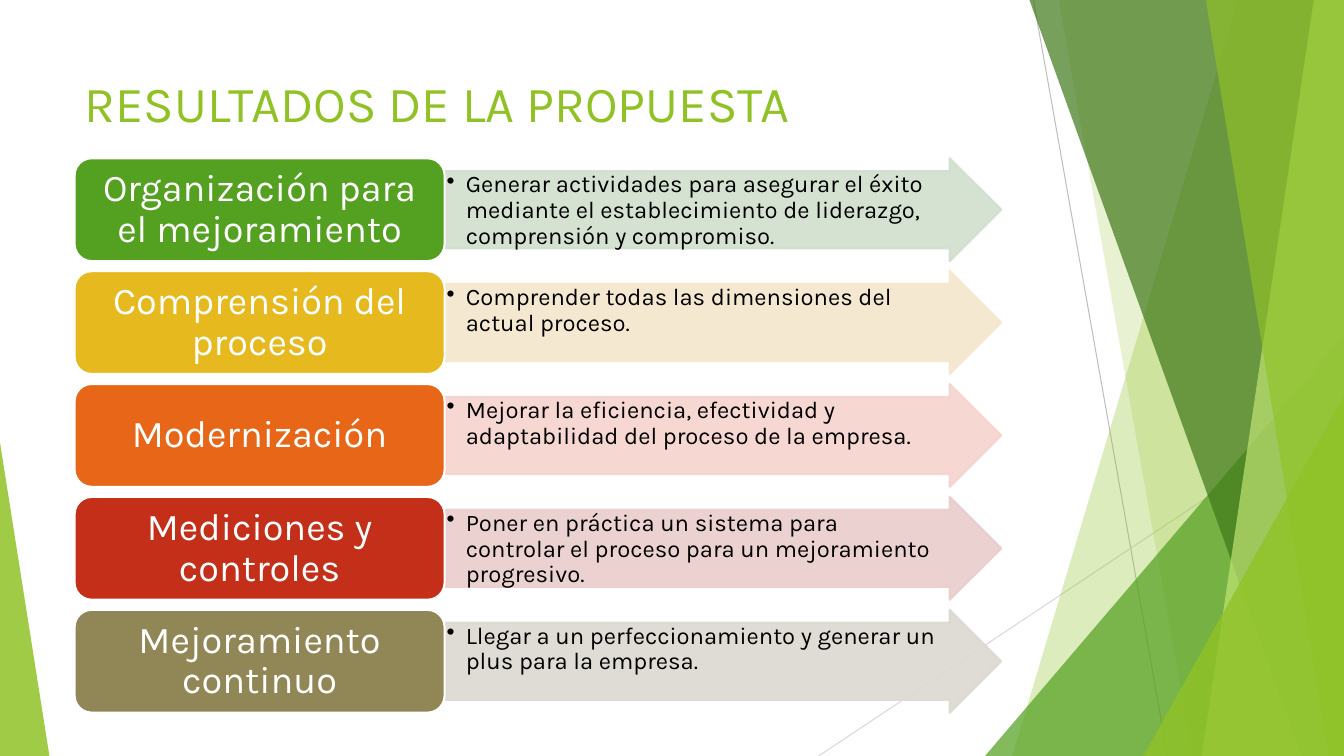
from lxml import etree
from pptx import Presentation
from pptx.dml.color import RGBColor
from pptx.enum.shapes import MSO_CONNECTOR, MSO_SHAPE
from pptx.enum.text import MSO_ANCHOR, MSO_AUTO_SIZE, PP_ALIGN
from pptx.oxml.ns import qn
from pptx.util import Inches, Pt

STRAIGHT = MSO_CONNECTOR.STRAIGHT
TRIANGLE, ARROW, ROUNDED = MSO_SHAPE.ISOSCELES_TRIANGLE, MSO_SHAPE.RIGHT_ARROW, MSO_SHAPE.ROUNDED_RECTANGLE
TOP, MIDDLE = MSO_ANCHOR.TOP, MSO_ANCHOR.MIDDLE
LEFT, CENTER = PP_ALIGN.LEFT, PP_ALIGN.CENTER

WHITE = RGBColor(0xFF, 0xFF, 0xFF)
BLACK = RGBColor(0x00, 0x00, 0x00)
GRAY = RGBColor(0xBF, 0xBF, 0xBF)
LIGHT_GRAY = RGBColor(0xD9, 0xD9, 0xD9)
LIME = RGBColor(0x90, 0xC2, 0x26)
PALE_LIME = RGBColor(0xC0, 0xE4, 0x74)
GREEN = RGBColor(0x54, 0xA0, 0x21)
DARK_GREEN = RGBColor(0x3F, 0x78, 0x19)
YELLOW = RGBColor(0xE6, 0xB9, 0x1E)
ORANGE = RGBColor(0xE7, 0x66, 0x18)
RED = RGBColor(0xC4, 0x2F, 0x1A)
OLIVE = RGBColor(0x91, 0x86, 0x55)
PALE_GREEN = RGBColor(0xD1, 0xDF, 0xCD)
PALE_YELLOW = RGBColor(0xF5, 0xE6, 0xCD)
PALE_ORANGE = RGBColor(0xF6, 0xD3, 0xCC)
PALE_RED = RGBColor(0xEA, 0xCD, 0xCD)
PALE_OLIVE = RGBColor(0xDC, 0xD9, 0xD1)

WIDTH, HEIGHT = 13.33, 7.5

RESULTS = [
    ("Organización para el mejoramiento", GREEN, PALE_GREEN,
     "Generar actividades para asegurar el éxito mediante el establecimiento "
     "de liderazgo, comprensión y compromiso."),
    ("Comprensión del proceso", YELLOW, PALE_YELLOW,
     "Comprender todas las dimensiones del actual proceso."),
    ("Modernización", ORANGE, PALE_ORANGE,
     "Mejorar la eficiencia, efectividad y adaptabilidad del proceso de la empresa."),
    ("Mediciones y controles", RED, PALE_RED,
     "Poner en práctica un sistema para controlar el proceso para un mejoramiento progresivo."),
    ("Mejoramiento continuo", OLIVE, PALE_OLIVE,
     "Llegar a un perfeccionamiento y generar un plus para la empresa."),
]


def write(shape, text, size, color, align=LEFT, anchor=TOP,
          insets=(0.1, 0.05, 0.1, 0.05), spacing=1.0, bullet_indent=None):
    frame = shape.text_frame
    frame.word_wrap = True
    frame.auto_size = MSO_AUTO_SIZE.NONE
    frame.vertical_anchor = anchor
    (frame.margin_left, frame.margin_top,
     frame.margin_right, frame.margin_bottom) = map(Inches, insets)
    paragraph = frame.paragraphs[0]
    paragraph.alignment = align
    paragraph.line_spacing = spacing
    run = paragraph.add_run()
    run.text = text
    run.font.name = "Karla"
    run.font.size = Pt(size)
    run.font.color.rgb = color
    if bullet_indent:
        properties = paragraph._p.get_or_add_pPr()
        properties.set("marL", str(Inches(bullet_indent)))
        properties.set("indent", str(-Inches(bullet_indent)))
        etree.SubElement(properties, qn("a:buChar")).set("char", "•")


class SlideBuilder:
    font_size_title, font_size_label, font_size_detail = 36, 27, 17

    def __init__(self, slide):
        self.slide = slide
        self.shapes = slide.shapes

    def paint(self, shape, fill, opacity=100, line=None):
        shape.shadow.inherit = False
        shape.fill.solid()
        shape.fill.fore_color.rgb = fill
        if line is None:
            shape.line.fill.background()
        else:
            shape.line.color.rgb = line
            shape.line.width = Pt(1.5)
        if opacity < 100:
            for color in shape._element.spPr.iter(qn("a:srgbClr")):
                etree.SubElement(color, qn("a:alpha")).set("val", str(opacity * 1000))

    def title(self, text, box):
        title = self.shapes.title
        title.left, title.top, title.width, title.height = map(Inches, box)
        write(title, text, self.font_size_title, LIME)

    def line(self, start, end, color):
        line = self.shapes.add_connector(STRAIGHT, *map(Inches, start + end))
        line.line.color.rgb = color
        line.line.width = Pt(0.75)
        etree.SubElement(line._element.spPr, qn("a:effectLst"))

    def band(self, top_left, bottom_left, color, opacity):
        """Slanted band that reaches the right edge of the slide."""
        points = [(top_left, 0), (WIDTH, 0), (WIDTH, HEIGHT), (bottom_left, HEIGHT)]
        corners = [(Inches(x), Inches(y)) for x, y in points]
        outline = self.shapes.build_freeform(*corners[0], scale=1.0)
        outline.add_line_segments(corners[1:], close=True)
        self.paint(outline.convert_to_shape(), color, opacity)

    def shape(self, kind, box, color, opacity=100, line=None, adjustments=()):
        shape = self.shapes.add_shape(kind, *map(Inches, box))
        for index, value in enumerate(adjustments):
            shape.adjustments[index] = value
        self.paint(shape, color, opacity, line)
        return shape

    def corner(self, left, top, width, apex, color, opacity):
        """Triangle that stands on the bottom edge of the slide."""
        self.shape(TRIANGLE, (left, top, width, HEIGHT - top), color, opacity,
                   adjustments=(apex,))

    def result(self, top, label, color, pale, detail):
        arrow = self.shape(ARROW, (4.42, top, 5.51, 1.02), pale, 90, pale, (0.75, 0.5))
        write(arrow, detail, self.font_size_detail, BLACK,
              insets=(0.01, 0.01, 0.26, 0.01), spacing=0.9, bullet_indent=0.19)
        box = self.shape(ROUNDED, (0.74, top, 3.67, 1.02), color, line=WHITE)
        write(box, label, self.font_size_label, WHITE, align=CENTER, anchor=MIDDLE,
              insets=(0.11, 0.06, 0.11, 0.06), spacing=0.9)


def main():
    deck = Presentation()
    deck.slide_width, deck.slide_height = Inches(WIDTH), Inches(HEIGHT)
    builder = SlideBuilder(deck.slides.add_slide(deck.slide_layouts[5]))

    # Green facets along the edges
    builder.line((10.25, 0), (11.58, HEIGHT), GRAY)
    builder.line((WIDTH, 4.03), (8.12, HEIGHT), LIGHT_GRAY)
    builder.band(12.28, 10.04, LIME, 30)
    builder.band(10.5, 11.83, LIME, 20)
    builder.corner(9.77, 3.33, 3.56, 1, GREEN, 72)
    builder.band(10.21, 12.91, DARK_GREEN, 70)
    builder.band(13.03, 11.92, PALE_LIME, 70)
    builder.band(11.96, 13.18, LIME, 65)
    builder.corner(11.34, 3.93, 1.99, 1, LIME, 80)
    builder.corner(0, 4.39, 0.49, 0, LIME, 85)

    # Title
    builder.title("RESULTADOS DE LA PROPUESTA", (0.74, 0.67, 9.4, 0.9))

    # Results, one row each
    for row, result in enumerate(RESULTS):
        builder.result(1.57 + 1.12 * row, *result)

    deck.save("out.pptx")


if __name__ == "__main__":
    main()
